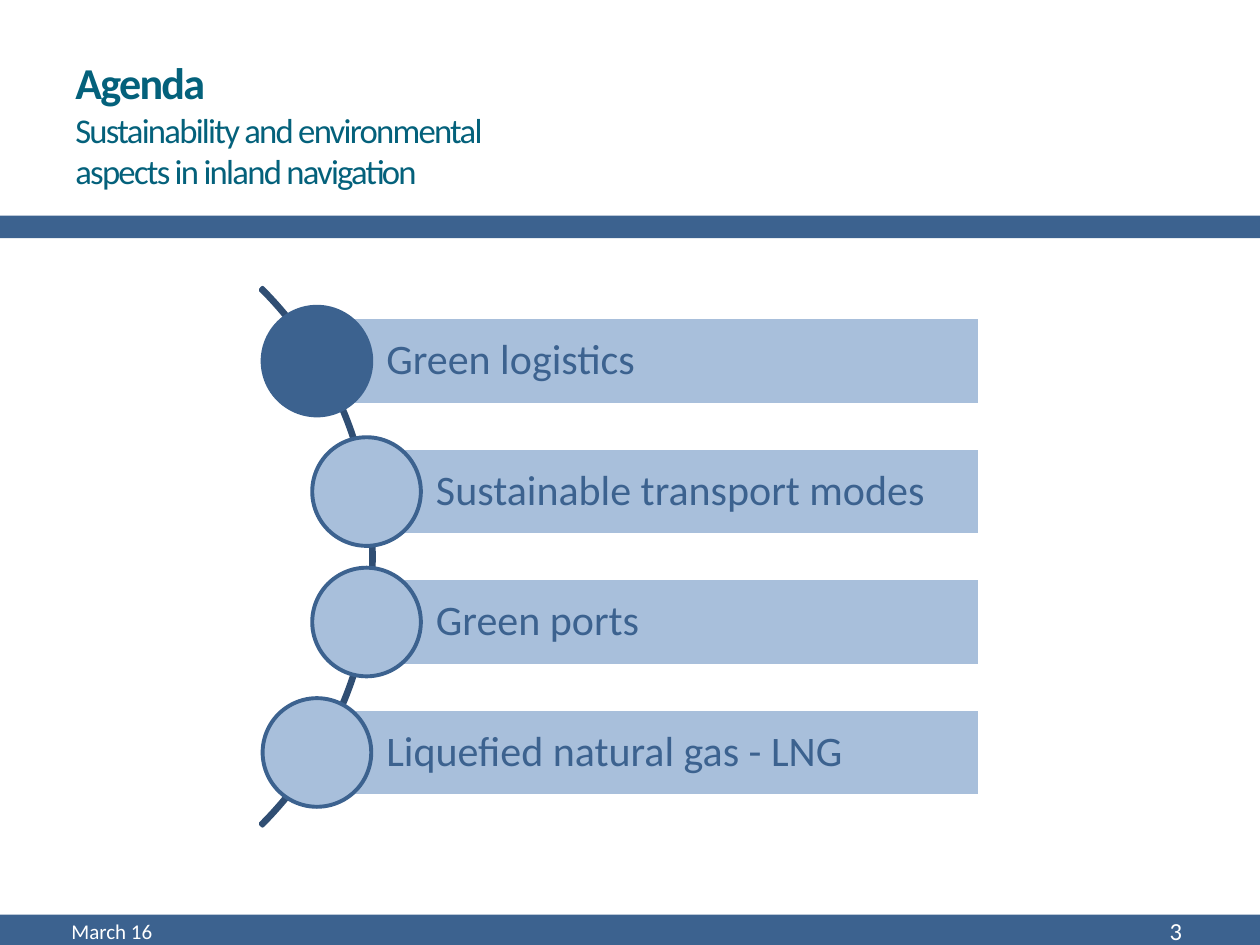
import pptx
import pptx.util
import pptx.dml.color
import pptx.enum.shapes
import pptx.enum.text

Cm, Pt = pptx.util.Cm, pptx.util.Pt
RGBColor = pptx.dml.color.RGBColor
SHAPE = pptx.enum.shapes.MSO_SHAPE
ALIGN = pptx.enum.text.PP_ALIGN
ANCHOR = pptx.enum.text.MSO_ANCHOR

BLUE = RGBColor(0x3C, 0x62, 0x8F)
LIGHT = RGBColor(0xA8, 0xBF, 0xDB)
NAVY = RGBColor(0x30, 0x4E, 0x73)
TEAL = RGBColor(0x04, 0x61, 0x7B)
WHITE = RGBColor(0xFF, 0xFF, 0xFF)

TITLE = "Agenda\v"
SUBTITLE = "Sustainability and environmental \vaspects in inland navigation"
DATE, PAGE = "March 16", "3"
# label, bar left (cm), circle colour
TOPICS = [
    ("Green logistics", 6.39, BLUE),
    ("Sustainable transport modes", 7.39, LIGHT),
    ("Green ports", 7.39, LIGHT),
    ("Liquefied natural gas - LNG", 6.39, LIGHT),
]

SLIDE_W, SLIDE_H = 25.4, 19.05
FIRST_MIDDLE, PITCH = 7.28, 2.63
BAR_RIGHT, BAR_H, CIRCLE = 19.75, 1.75, 2.19
ARC_LEFT, ARC_SIZE = -7.8, 15.34

prs = pptx.Presentation()
prs.slide_width, prs.slide_height = Cm(SLIDE_W), Cm(SLIDE_H)
s = prs.slides.add_slide(prs.slide_layouts[6])


def add_shape(kind, x, y, w, h, fill=None, line=None, width=2.08):
    sp = s.shapes.add_shape(kind, Cm(x), Cm(y), Cm(w), Cm(h))
    sp.shadow.inherit = False
    if fill is None:
        sp.fill.background()
    else:
        sp.fill.solid()
        sp.fill.fore_color.rgb = fill
    if line is None:
        sp.line.fill.background()
    else:
        sp.line.color.rgb = line
        sp.line.width = Pt(width)
    return sp


def add_text(sp, *parts, color=WHITE, align=ALIGN.LEFT, spacing=None,
             tracking=None, left=0.25):
    """Write (text, size, bold) parts as the runs of one paragraph."""
    tf = sp.text_frame
    tf.word_wrap = True
    tf.vertical_anchor = ANCHOR.MIDDLE
    tf.margin_left = Cm(left)
    p = tf.paragraphs[0]
    p.alignment = align
    p.line_spacing = spacing
    for text, size, bold in parts:
        for i, line in enumerate(text.split("\v")):
            if i:
                p.add_line_break()
            if not line:
                continue
            r = p.add_run()
            r.text = line
            r.font.name, r.font.size, r.font.bold = "Calibri", Pt(size), bold
            r.font.color.rgb = color
            if tracking:
                r.font._element.set("spc", str(tracking * 100))


def add_box(x, y, w, h):
    return s.shapes.add_textbox(Cm(x), Cm(y), Cm(w), Cm(h))


add_shape(SHAPE.RECTANGLE, 0, 18.44, SLIDE_W, SLIDE_H - 18.44, BLUE)
add_shape(SHAPE.RECTANGLE, 0, 4.35, SLIDE_W, 0.45, BLUE)
add_text(add_box(1.27, 1.12, 13.23, 2.74),
         (TITLE, 25.2, True), (SUBTITLE, 19.8, False), color=TEAL, tracking=-1)

arc_middle = FIRST_MIDDLE + PITCH * (len(TOPICS) - 1) / 2
arc = add_shape(SHAPE.BLOCK_ARC, ARC_LEFT, arc_middle - ARC_SIZE / 2,
                ARC_SIZE, ARC_SIZE, line=NAVY)
for i, value in enumerate((189, 27, 0.004)):
    arc.adjustments[i] = value

for i, (label, left, color) in enumerate(TOPICS):
    middle = FIRST_MIDDLE + i * PITCH
    bar = add_shape(SHAPE.RECTANGLE, left, middle - BAR_H / 2,
                    BAR_RIGHT - left, BAR_H, LIGHT, WHITE)
    add_text(bar, (label, 24, False), color=BLUE, spacing=0.9, left=1.4)
    add_shape(SHAPE.OVAL, left - CIRCLE / 2, middle - CIRCLE / 2,
              CIRCLE, CIRCLE, color, BLUE, 2.25)

add_text(add_box(1.19, 18.31, 8.05, 0.91), (DATE, 12, False))
add_text(add_box(21.11, 18.31, 2.97, 0.91), (PAGE, 14, False), align=ALIGN.RIGHT)

prs.save("out.pptx")
